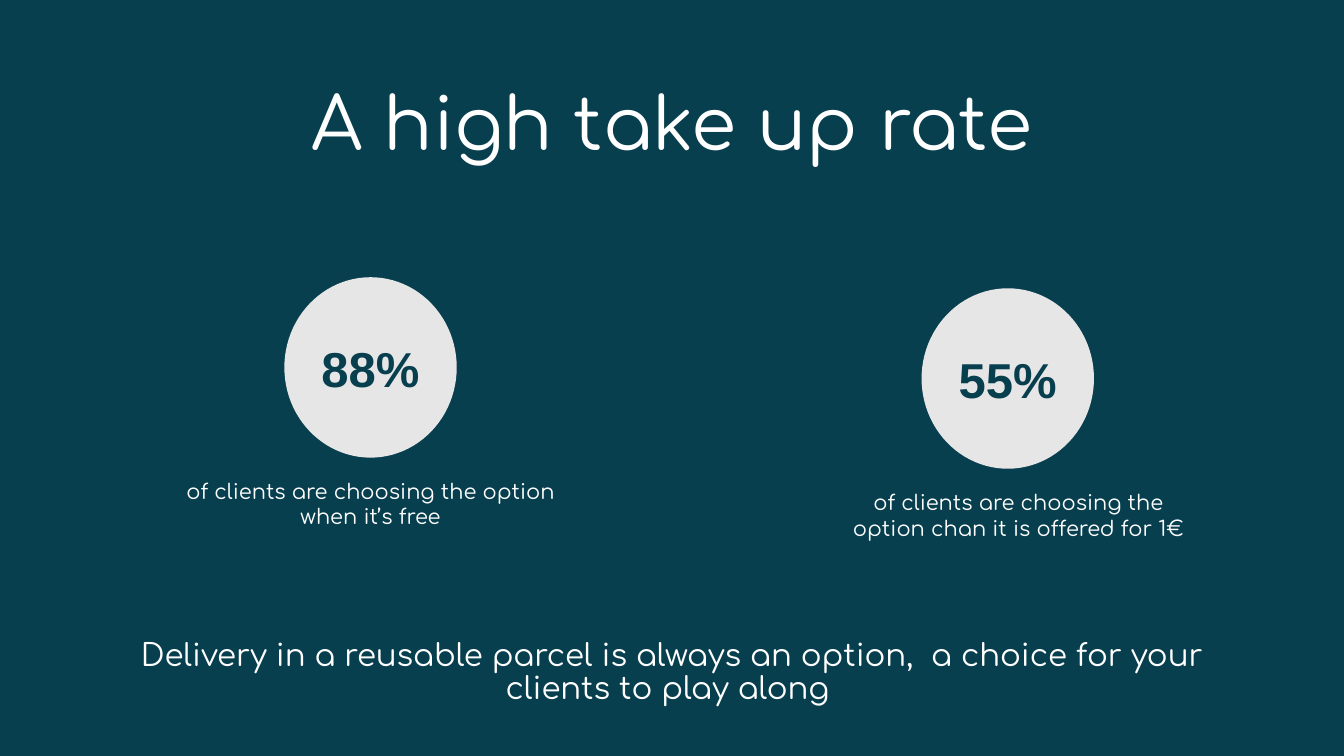
import pptx
import pptx.util
import pptx.dml.color
import pptx.enum.shapes
import pptx.enum.text

TITLE = "A high take up rate"
CLOSING = "Delivery in a reusable parcel is always an option,  a choice for your clients to play along "
RATES = [
    {"share": "88%", "circle": (2.82, 2.75), "caption_left": 1.72, "caption_width": 3.91,
     "margin": 0, "caption": "of clients are choosing the option when it’s free"},
    {"share": "55%", "circle": (9.14, 2.86), "caption_left": 7.79, "caption_width": 4.12,
     "margin": 0.5, "caption": "of clients are choosing the option chan it is offered for 1€"},
]
COLOURS = {"teal": "083F4E", "grey": "E7E6E6", "white": "FFFFFF"}
CIRCLE_SIZE = (1.71, 1.79)
CAPTION_DROP = 1.9
CAPTION_HEIGHT = 1.03

Inches = pptx.util.Inches


def colour(name):
    return pptx.dml.color.RGBColor.from_string(COLOURS[name])


def write(box, text, size, font="Comfortaa", ink="white", bold=False,
          anchor="TOP", inset=0.1, spacing=1.0, margin=0):
    frame = box.text_frame
    frame.word_wrap = True
    frame.auto_size = pptx.enum.text.MSO_AUTO_SIZE.NONE
    frame.vertical_anchor = pptx.enum.text.MSO_ANCHOR[anchor]
    frame.margin_left = frame.margin_right = Inches(0.1)
    frame.margin_top = frame.margin_bottom = Inches(inset)
    para = frame.paragraphs[0]
    para.alignment = pptx.enum.text.PP_ALIGN.CENTER
    para.line_spacing = spacing
    para.space_before = pptx.util.Pt(0)
    if margin:
        properties = para._p.get_or_add_pPr()
        properties.set("marL", str(Inches(margin)))
        properties.set("indent", "0")
    span = para.add_run()
    span.text = text
    span.font.size = pptx.util.Pt(size)
    span.font.name = font
    span.font.bold = bold
    span.font.color.rgb = colour(ink)


def add_rate(page, rate):
    left, top = rate["circle"]
    circle = page.shapes.add_shape(
        pptx.enum.shapes.MSO_SHAPE.OVAL, *map(Inches, (left, top, *CIRCLE_SIZE)))
    circle.shadow.inherit = False
    circle.fill.solid()
    circle.fill.fore_color.rgb = colour("grey")
    circle.line.fill.background()
    write(circle, rate["share"], 35, font="Arial", ink="teal", bold=True, anchor="MIDDLE")
    caption = page.shapes.add_textbox(*map(Inches, (
        rate["caption_left"], top + CAPTION_DROP, rate["caption_width"], CAPTION_HEIGHT)))
    write(caption, rate["caption"], 15, margin=rate["margin"])


def main():
    deck = pptx.Presentation()
    deck.slide_width, deck.slide_height = Inches(13.33), Inches(7.5)
    page = deck.slides.add_slide(deck.slide_layouts.get_by_name("Title Only"))
    page.background.fill.solid()
    page.background.fill.fore_color.rgb = colour("teal")

    title = page.shapes.title
    title.left, title.top, title.width, title.height = map(Inches, (0.36, 0.53, 12.61, 1.45))
    write(title, TITLE, 52, anchor="MIDDLE", inset=0.05, spacing=0.9)

    for rate in RATES:
        add_rate(page, rate)

    closing = page.shapes.add_textbox(*map(Inches, (0.89, 6.25, 11.55, 0.86)))
    write(closing, CLOSING, 22, anchor="MIDDLE", inset=0.05, spacing=0.9)
    deck.save("out.pptx")


if __name__ == "__main__":
    main()
